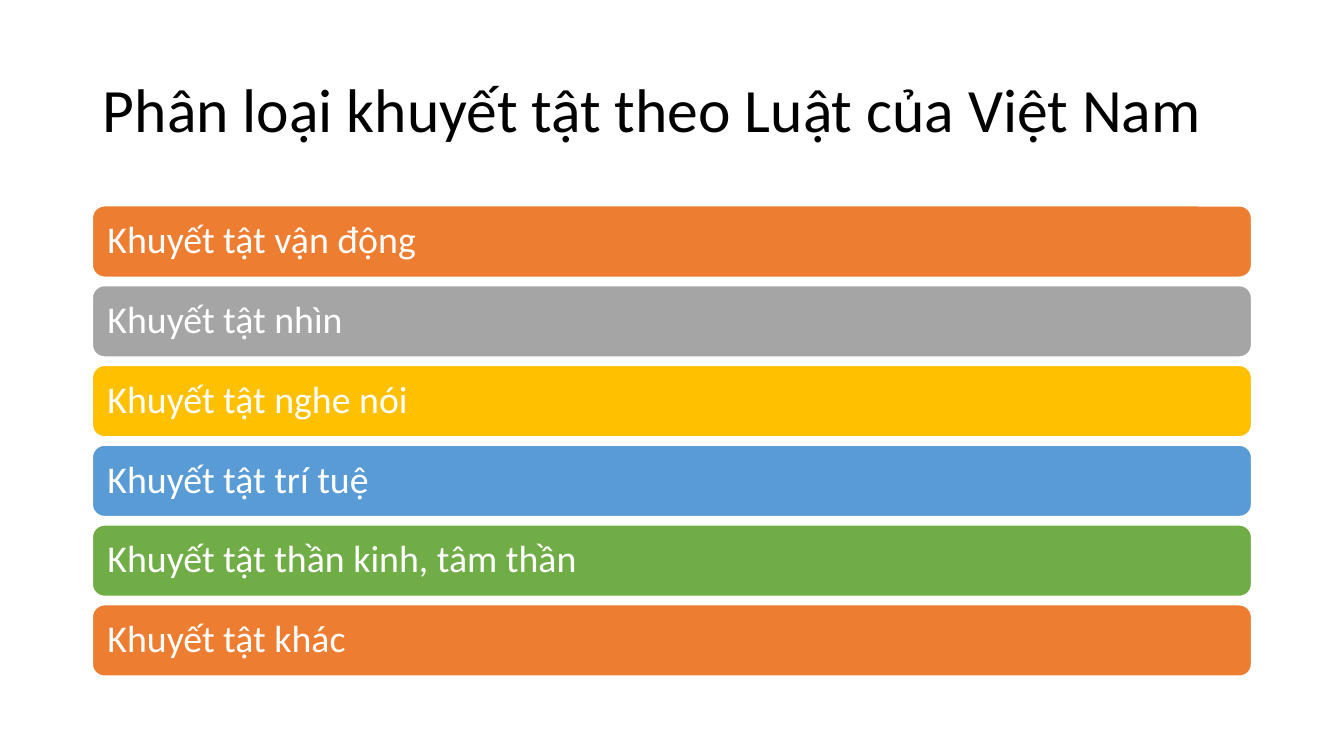
import dataclasses

import pptx
import pptx.dml.color
import pptx.enum.shapes
import pptx.enum.text
import pptx.shapes.autoshape
import pptx.slide
import pptx.text.text
import pptx.util

EMU_PER_PX = 9525


@dataclasses.dataclass(frozen=True)
class Theme:
    font: str = "Calibri"
    title_size: int = 44
    bar_size: int = 27
    black: str = "000000"
    white: str = "FFFFFF"
    orange: str = "ED7D31"
    gray: str = "A5A5A5"
    gold: str = "FFC000"
    blue: str = "599BD5"
    green: str = "70AD47"


@dataclasses.dataclass(frozen=True)
class Box:
    left: int
    top: int
    width: int
    height: int


@dataclasses.dataclass(frozen=True)
class Category:
    label: str
    color: str


THEME = Theme()
TITLE_BOX = Box(88, 38, 1104, 139)
FIRST_BAR = Box(88, 196, 1104, 68)
BAR_PITCH = 76
CATEGORIES = (
    Category("Khuyết tật vận động", THEME.orange),
    Category("Khuyết tật nhìn", THEME.gray),
    Category("Khuyết tật nghe nói", THEME.gold),
    Category("Khuyết tật trí tuệ", THEME.blue),
    Category("Khuyết tật thần kinh, tâm thần", THEME.green),
    Category("Khuyết tật khác", THEME.orange),
)


def px(length: int) -> pptx.util.Emu:
    return pptx.util.Emu(length * EMU_PER_PX)


def rgb(color: str) -> pptx.dml.color.RGBColor:
    return pptx.dml.color.RGBColor.from_string(color)


def write_text(
    frame: pptx.text.text.TextFrame,
    text: str,
    *,
    size: int,
    color: str,
    inset_x: int,
    inset_y: int,
) -> None:
    frame.word_wrap = True
    frame.auto_size = pptx.enum.text.MSO_AUTO_SIZE.NONE
    frame.vertical_anchor = pptx.enum.text.MSO_ANCHOR.MIDDLE
    frame.margin_left = frame.margin_right = px(inset_x)
    frame.margin_top = frame.margin_bottom = px(inset_y)
    paragraph = frame.paragraphs[0]
    paragraph.alignment = pptx.enum.text.PP_ALIGN.LEFT
    paragraph.line_spacing = 0.9
    run = paragraph.add_run()
    run.text = text
    run.font.name = THEME.font
    run.font.size = pptx.util.Pt(size)
    run.font.color.rgb = rgb(color)


def draw_title(slide: pptx.slide.Slide, text: str, box: Box) -> None:
    title = slide.shapes.title
    title.left, title.top = px(box.left), px(box.top)
    title.width, title.height = px(box.width), px(box.height)
    write_text(title.text_frame, text, size=THEME.title_size,
               color=THEME.black, inset_x=10, inset_y=5)


def draw_bar(slide: pptx.slide.Slide, category: Category, box: Box) -> None:
    bar = slide.shapes.add_shape(
        pptx.enum.shapes.MSO_SHAPE.ROUNDED_RECTANGLE,
        px(box.left), px(box.top), px(box.width), px(box.height),
    )
    bar.adjustments[0] = 0.17
    bar.shadow.inherit = False
    bar.fill.solid()
    bar.fill.fore_color.rgb = rgb(category.color)
    bar.line.color.rgb = rgb(THEME.white)
    bar.line.width = pptx.util.Pt(1)
    write_text(bar.text_frame, category.label, size=THEME.bar_size,
               color=THEME.white, inset_x=11, inset_y=11)


def main() -> None:
    presentation = pptx.Presentation()
    presentation.slide_width = px(1280)
    presentation.slide_height = px(720)
    slide = presentation.slides.add_slide(presentation.slide_layouts[5])
    draw_title(slide, "Phân loại khuyết tật theo Luật của Việt Nam", TITLE_BOX)
    for row, category in enumerate(CATEGORIES):
        box = dataclasses.replace(FIRST_BAR, top=FIRST_BAR.top + row * BAR_PITCH)
        draw_bar(slide, category, box)
    presentation.save("out.pptx")


if __name__ == "__main__":
    main()
